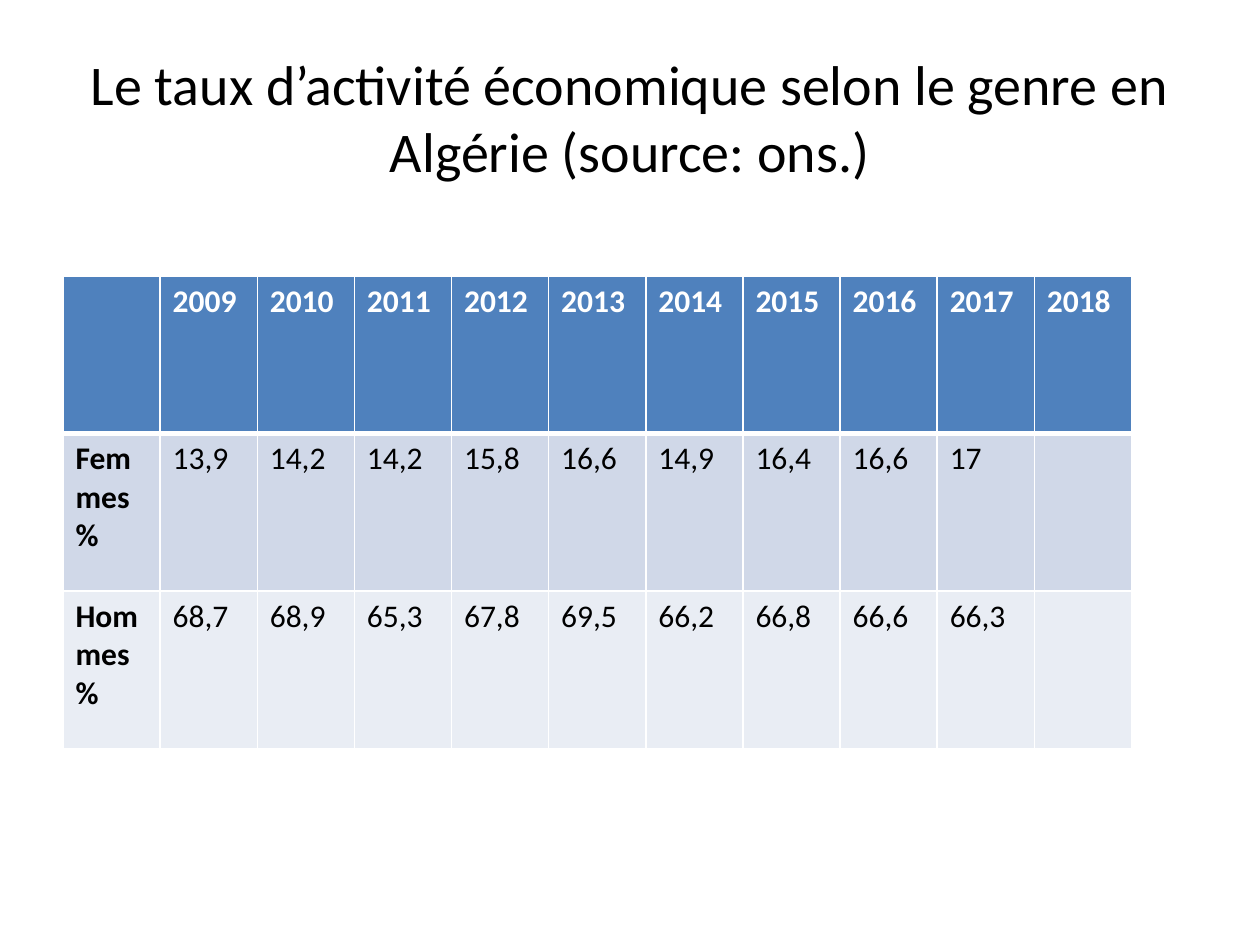
from dataclasses import dataclass

from lxml.etree import SubElement
from pptx import Presentation
from pptx.dml.color import RGBColor
from pptx.enum.text import MSO_ANCHOR, PP_ALIGN
from pptx.oxml.ns import qn
from pptx.util import Inches, Pt


@dataclass(frozen=True)
class Theme:
    font: str = "Calibri"
    title_size: int = 32
    table_size: int = 18
    text: str = "000000"
    header_text: str = "FFFFFF"
    header_fill: str = "4F81BD"
    band_fills: tuple = ("D0D8E8", "E9EDF4")
    border: str = "FFFFFF"
    thin: int = 1
    thick: int = 3


class SlideBuilder:
    def __init__(self, slide, theme):
        self.slide = slide
        self.theme = theme

    def style(self, p, size, color, bold=False):
        for r in p.runs:
            r.font.name = self.theme.font
            r.font.size = Pt(size)
            r.font.bold = bold
            r.font.color.rgb = RGBColor.from_string(color)

    def title(self, text, left, top, width, height):
        sp = self.slide.shapes.title
        sp.left, sp.top = Inches(left), Inches(top)
        sp.width, sp.height = Inches(width), Inches(height)
        tf = sp.text_frame
        tf.text = text
        tf.word_wrap = True
        tf.vertical_anchor = MSO_ANCHOR.MIDDLE
        p = tf.paragraphs[0]
        p.alignment = PP_ALIGN.CENTER
        self.style(p, self.theme.title_size, self.theme.text)

    def borders(self, cell, **widths):
        tc_pr = cell._tc.get_or_add_tcPr()
        for side in "LRTB":
            width = Pt(widths.get(side, self.theme.thin))
            ln = SubElement(tc_pr, qn(f"a:ln{side}"), w=str(width))
            fill = SubElement(ln, qn("a:solidFill"))
            SubElement(fill, qn("a:srgbClr"), val=self.theme.border)

    def table(self, rows, left, top, width, height):
        t = self.theme
        table = self.slide.shapes.add_table(
            len(rows), len(rows[0]), Inches(left), Inches(top),
            Inches(width), Inches(height)).table
        for i, values in enumerate(rows):
            header = i == 0
            fill = t.header_fill if header else t.band_fills[(i - 1) % 2]
            color = t.header_text if header else t.text
            # The line under the header row is thicker than the rest
            edges = {0: {"B": t.thick}, 1: {"T": t.thick}}.get(i, {})
            for j, value in enumerate(values):
                cell = table.cell(i, j)
                self.borders(cell, **edges)
                cell.fill.solid()
                cell.fill.fore_color.rgb = RGBColor.from_string(fill)
                cell.text_frame.text = value
                self.style(cell.text_frame.paragraphs[0], t.table_size, color,
                           bold=header or j == 0)


def main():
    prs = Presentation()
    prs.slide_width, prs.slide_height = Inches(10), Inches(7.5)
    s = prs.slides.add_slide(prs.slide_layouts[5])
    builder = SlideBuilder(s, Theme())

    # Title
    builder.title("Le taux d’activité économique selon le genre en Algérie "
                  "(source: ons.)", 0.5, 0.3, 9, 1.25)

    # Activity rates by gender and year
    years = [str(year) for year in range(2009, 2019)]
    women = ["13,9", "14,2", "14,2", "15,8", "16,6",
             "14,9", "16,4", "16,6", "17", ""]
    men = ["68,7", "68,9", "65,3", "67,8", "69,5",
           "66,2", "66,8", "66,6", "66,3", ""]
    rows = [["", *years], ["Femmes%", *women], ["Hommes%", *men]]
    builder.table(rows, 0.5, 2.19, 8.48, 3.75)

    prs.save("out.pptx")


if __name__ == "__main__":
    main()
